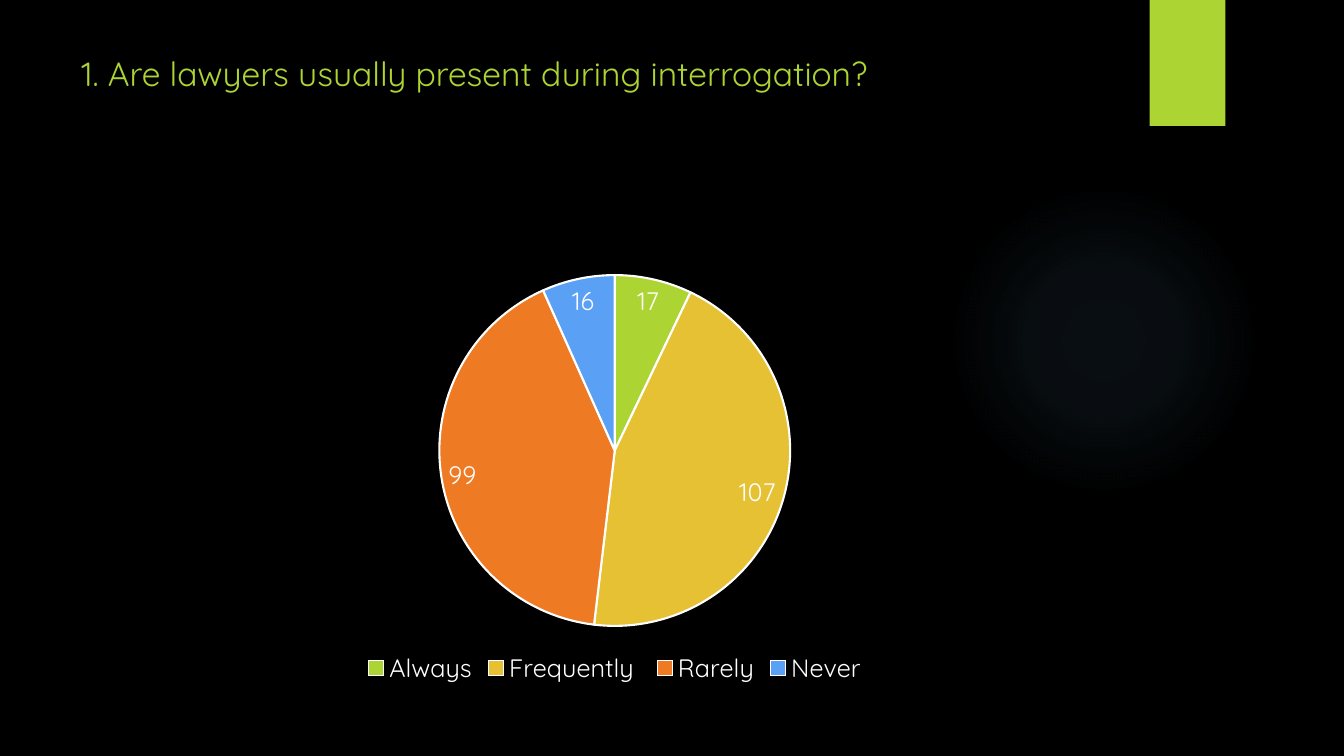
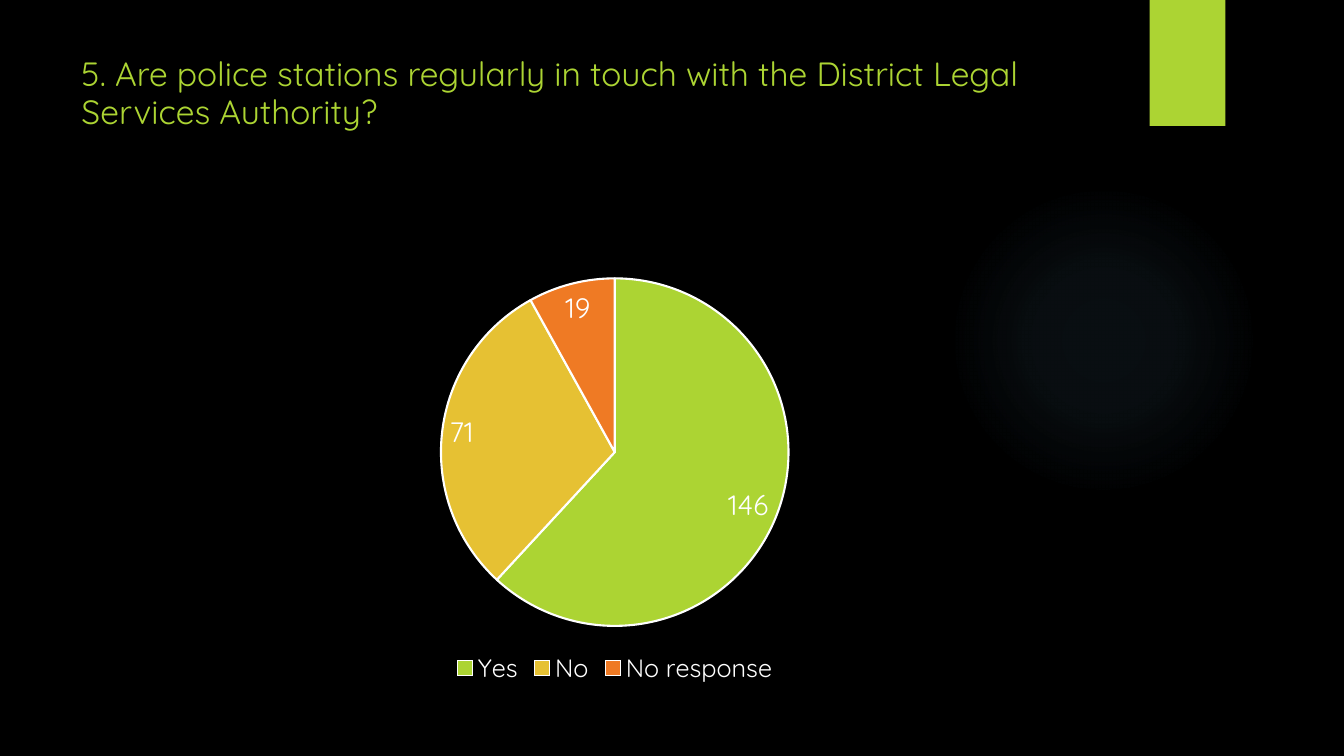
from lxml.etree import SubElement
from pptx import Presentation
from pptx.chart.data import CategoryChartData
from pptx.dml.color import RGBColor
from pptx.enum.chart import XL_CHART_TYPE, XL_LABEL_POSITION, XL_LEGEND_POSITION
from pptx.enum.shapes import MSO_SHAPE
from pptx.enum.text import MSO_ANCHOR, MSO_AUTO_SIZE, PP_ALIGN
from pptx.oxml.ns import qn
from pptx.util import Pt

PX = 9525  # EMU in one px
FONT = "Quicksand"
BLACK = RGBColor(0x00, 0x00, 0x00)
WHITE = RGBColor(0xFF, 0xFF, 0xFF)
LIME = RGBColor(0xAC, 0xD4, 0x33)
GOLD = RGBColor(0xE6, 0xC1, 0x33)
ORANGE = RGBColor(0xEF, 0x7A, 0x24)
BLUE = RGBColor(0x5A, 0xA0, 0xF5)
GLOW = RGBColor(0x7A, 0xC4, 0xF0)
SLICE_COLORS = (LIME, GOLD, ORANGE, BLUE)
GLOW_STOPS = ((0, 7), (36, 6), (69, 0))  # position and opacity in percent

# question, answers with their counts, label size
QUESTIONS = (
    ("1. Are lawyers usually present during interrogation?",
     (("Always", 17), ("Frequently ", 107), ("Rarely", 99), ("Never", 16)), 18),
    ("5. Are police stations regularly in touch with the District Legal "
     "Services Authority?",
     (("Yes", 146), ("No", 71), ("No response", 19)), 20),
)


def box(*lengths):
    return [length * PX for length in lengths]


def style_font(font, size, color):
    font.name = FONT
    font.size = Pt(size)
    font.bold = False
    font.color.rgb = color


def style_layout(layout):
    """Give the layout its black background and title position."""
    layout.background.fill.solid()
    layout.background.fill.fore_color.rgb = BLACK
    title = layout.placeholders[0]
    title.left, title.top, title.width, title.height = box(68, 48, 988, 147)


def add_plain_shape(s, kind, lengths):
    sp = s.shapes.add_shape(kind, *box(*lengths))
    sp.shadow.inherit = False
    sp.line.fill.background()
    return sp


def fill_radial(sp, color, stops):
    """Fill a shape from its centre outwards with fading opacity."""
    sp.fill.gradient()
    grad = sp.fill._xPr.find(qn("a:gradFill"))
    for child in list(grad):
        grad.remove(child)
    stop_list = SubElement(grad, qn("a:gsLst"))
    for position, opacity in stops:
        stop = SubElement(stop_list, qn("a:gs"), pos=str(position * 1000))
        rgb = SubElement(stop, qn("a:srgbClr"), val=str(color))
        SubElement(rgb, qn("a:alpha"), val=str(opacity * 1000))
    circle = SubElement(grad, qn("a:path"), path="circle")
    SubElement(circle, qn("a:fillToRect"), dict.fromkeys("ltrb", "50000"))


def add_decor(s):
    glow = add_plain_shape(s, MSO_SHAPE.OVAL, (903, 176, 296, 296))
    fill_radial(glow, GLOW, GLOW_STOPS)
    band = add_plain_shape(s, MSO_SHAPE.RECTANGLE, (1095, 0, 72, 120))
    band.fill.solid()
    band.fill.fore_color.rgb = LIME


def set_title(s, text):
    tf = s.shapes.title.text_frame
    tf.text = text
    tf.vertical_anchor = MSO_ANCHOR.TOP
    tf.auto_size = MSO_AUTO_SIZE.NONE
    p = tf.paragraphs[0]
    p.alignment = PP_ALIGN.LEFT
    p.line_spacing = 0.95
    style_font(p.font, 24, LIME)


def add_pie(s, answers, label_size):
    data = CategoryChartData()
    data.categories = [answer for answer, _ in answers]
    data.add_series("Series 1", [count for _, count in answers])
    chart = s.shapes.add_chart(
        XL_CHART_TYPE.PIE, *box(116, 215, 939, 441), data).chart
    chart.has_title = False
    style_font(chart.font, 10, WHITE)

    chart.has_legend = True
    chart.legend.position = XL_LEGEND_POSITION.BOTTOM
    chart.legend.include_in_layout = False
    style_font(chart.legend.font, 18, WHITE)

    plot = chart.plots[0]
    plot.vary_by_categories = True
    for i, color in enumerate(SLICE_COLORS[:len(answers)]):
        fmt = plot.series[0].points[i].format
        fmt.fill.solid()
        fmt.fill.fore_color.rgb = color
        fmt.line.color.rgb = WHITE
        fmt.line.width = Pt(1.5)

    labels = plot.series[0].data_labels
    labels.show_value = True
    labels.position = XL_LABEL_POSITION.BEST_FIT
    style_font(labels.font, label_size, WHITE)


def main():
    prs = Presentation()
    prs.slide_width, prs.slide_height = box(1280, 720)
    layout = prs.slide_layouts.get_by_name("Title Only")
    style_layout(layout)
    for question, answers, label_size in QUESTIONS:
        s = prs.slides.add_slide(layout)
        add_decor(s)
        set_title(s, question)
        add_pie(s, answers, label_size)
    prs.save("out.pptx")


if __name__ == "__main__":
    main()
